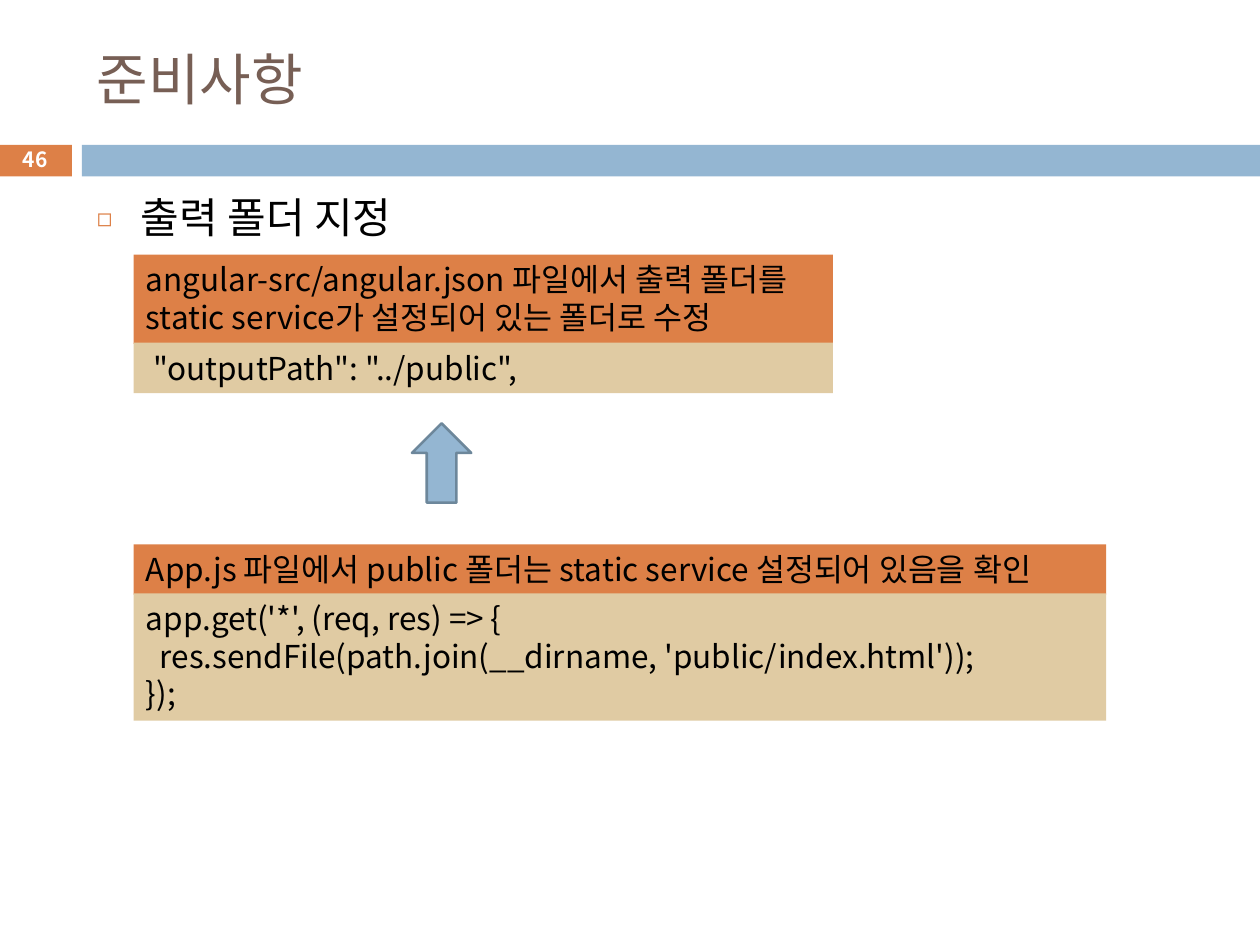
from dataclasses import dataclass

import pptx
import pptx.dml.color
import pptx.enum.shapes
import pptx.enum.text
import pptx.oxml.ns
import pptx.util
from lxml import etree

Shape = pptx.enum.shapes.MSO_SHAPE
Align = pptx.enum.text.PP_ALIGN
Anchor = pptx.enum.text.MSO_ANCHOR

COLUMNS, ROWS = 100, 75
SLIDE_WIDTH, SLIDE_HEIGHT = pptx.util.Inches(10), pptx.util.Inches(7.5)


@dataclass(frozen=True)
class Theme:
    font: str = "Noto Sans CJK KR"
    orange: str = "DD8047"
    blue: str = "94B6D2"
    blue_edge: str = "6D879B"
    sand: str = "E0CBA3"
    brown: str = "775F55"
    black: str = "000000"
    white: str = "FFFFFF"
    title_size: float = 32
    topic_size: float = 24
    panel_size: float = 18
    number_size: float = 12
    leading: float = 1.19


@dataclass(frozen=True)
class Area:
    """A rectangle in grid columns and rows."""
    column: float
    row: float
    width: float
    height: float

    def emu(self) -> tuple:
        across, down = SLIDE_WIDTH / COLUMNS, SLIDE_HEIGHT / ROWS
        return (round(self.column * across), round(self.row * down),
                round(self.width * across), round(self.height * down))


@dataclass(frozen=True)
class Line:
    text: str
    indent: float = 0


@dataclass(frozen=True)
class Panel:
    area: Area
    fill: str
    lines: tuple


THEME = Theme()
PANEL_LEFT = 10.6
SETTING_WIDTH, SERVER_WIDTH = 55.5, 77.2

PANELS = (
    Panel(Area(PANEL_LEFT, 20.2, SETTING_WIDTH, 7.1), THEME.orange, (
        Line("angular-src/angular.json 파일에서 출력 폴더를"),
        Line("static service가 설정되어 있는 폴더로 수정"))),
    Panel(Area(PANEL_LEFT, 27.2, SETTING_WIDTH, 4), THEME.sand, (
        Line('"outputPath": "../public",', 0.6),)),
    Panel(Area(PANEL_LEFT, 43.2, SERVER_WIDTH, 4), THEME.orange, (
        Line("App.js 파일에서 public 폴더는 static service 설정되어 있음을 확인"),)),
    Panel(Area(PANEL_LEFT, 47.1, SERVER_WIDTH, 10.1), THEME.sand, (
        Line("app.get('*', (req, res) => {"),
        Line("res.sendFile(path.join(__dirname, 'public/index.html'));", 1.1),
        Line("});"))),
)


def rgb(value: str) -> pptx.dml.color.RGBColor:
    return pptx.dml.color.RGBColor.from_string(value)


def add_block(slide, area: Area, fill: str, kind=Shape.RECTANGLE):
    block = slide.shapes.add_shape(kind, *area.emu())
    block.shadow.inherit = False
    block.fill.solid()
    block.fill.fore_color.rgb = rgb(fill)
    block.line.fill.background()
    return block


def add_label(slide, area: Area):
    return slide.shapes.add_textbox(*area.emu())


def write(holder, lines: tuple, size: float, color: str, bold: bool = False,
          align=Align.LEFT, anchor=Anchor.TOP) -> None:
    frame = holder.text_frame
    frame_format = {"word_wrap": True, "vertical_anchor": anchor,
                    "auto_size": pptx.enum.text.MSO_AUTO_SIZE.NONE}
    for name, value in frame_format.items():
        setattr(frame, name, value)
    font_format = {"size": pptx.util.Pt(size), "bold": bold, "name": THEME.font}
    for index, line in enumerate(lines):
        paragraph = frame.add_paragraph() if index else frame.paragraphs[0]
        paragraph.alignment = align
        paragraph.line_spacing = pptx.util.Pt(round(size * THEME.leading, 1))
        if line.indent:
            margin = round(line.indent * SLIDE_WIDTH / COLUMNS)
            paragraph._p.get_or_add_pPr().set("marL", str(margin))
        run = paragraph.add_run()
        run.text = line.text
        for name, value in font_format.items():
            setattr(run.font, name, value)
        run.font.color.rgb = rgb(color)
        east_asian = etree.SubElement(run._r.get_or_add_rPr(), pptx.oxml.ns.qn("a:ea"))
        east_asian.set("typeface", THEME.font)


def add_bullet(paragraph, symbol: str, color: str, percent: int, hang: float) -> None:
    """Give the paragraph a hanging bullet, with hang in grid columns."""
    properties = paragraph._p.get_or_add_pPr()
    margin = round(hang * SLIDE_WIDTH / COLUMNS)
    properties.set("marL", str(margin))
    properties.set("indent", str(-margin))
    qn = pptx.oxml.ns.qn
    bullet_color = etree.SubElement(properties, qn("a:buClr"))
    etree.SubElement(bullet_color, qn("a:srgbClr")).set("val", color)
    etree.SubElement(properties, qn("a:buSzPct")).set("val", str(percent * 1000))
    etree.SubElement(properties, qn("a:buFont")).set("typeface", THEME.font)
    etree.SubElement(properties, qn("a:buChar")).set("char", symbol)


def add_heading(slide) -> None:
    add_block(slide, Area(-0.1, 11.5, 5.8, 2.5), THEME.orange)
    add_block(slide, Area(6.5, 11.5, 93.5, 2.5), THEME.blue)
    title = add_label(slide, Area(6.7, 2.5, 89.2, 7.4))
    write(title, (Line("준비사항"),), THEME.title_size, THEME.brown,
          anchor=Anchor.MIDDLE)
    page_number = add_label(slide, Area(-0.1, 11.3, 5.8, 2.7))
    write(page_number, (Line("46"),), THEME.number_size, THEME.white, bold=True,
          align=Align.CENTER, anchor=Anchor.MIDDLE)


def add_topic(slide) -> None:
    topic = add_label(slide, Area(6.7, 14.7, 89.2, 55.1))
    write(topic, (Line("출력 폴더 지정"),), THEME.topic_size, THEME.black)
    add_bullet(topic.text_frame.paragraphs[0], "◻", THEME.orange, 60, 3.5)


def add_arrow(slide) -> None:
    arrow = add_block(slide, Area(32.7, 33.6, 4.7, 6.3), THEME.blue, Shape.UP_ARROW)
    arrow.line.color.rgb = rgb(THEME.blue_edge)
    arrow.line.width = pptx.util.Pt(1.5)


def main() -> None:
    deck = pptx.Presentation()
    deck.slide_width, deck.slide_height = SLIDE_WIDTH, SLIDE_HEIGHT
    slide = deck.slides.add_slide(deck.slide_layouts[6])
    add_heading(slide)
    add_topic(slide)
    for panel in PANELS:
        block = add_block(slide, panel.area, panel.fill)
        write(block, panel.lines, THEME.panel_size, THEME.black)
    add_arrow(slide)
    deck.save("out.pptx")


if __name__ == "__main__":
    main()
